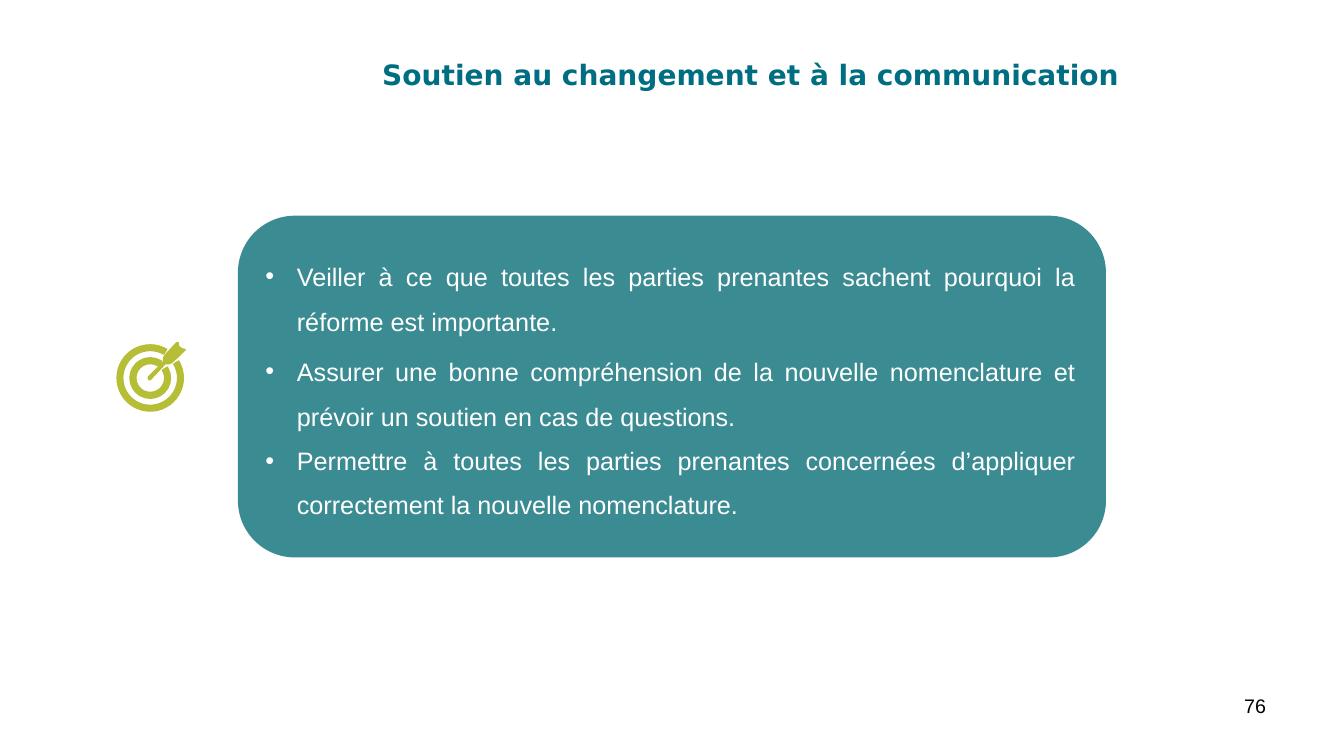
import dataclasses

import pptx
import pptx.dml.color
import pptx.enum.shapes
import pptx.enum.text
import pptx.oxml.ns
import pptx.util
from lxml import etree

WIDTH, HEIGHT = pptx.util.Inches(13.33), pptx.util.Inches(7.5)
TEAL, DEEP_TEAL, LIME, WHITE, BLACK = "3B8B92", "006E82", "B5BE35", "FFFFFF", "000000"
ANCHOR_TOP = pptx.enum.text.MSO_ANCHOR.TOP
LEFT, JUSTIFY = pptx.enum.text.PP_ALIGN.LEFT, pptx.enum.text.PP_ALIGN.JUSTIFY
PRESET = pptx.enum.shapes.MSO_SHAPE


@dataclasses.dataclass(frozen=True)
class Area:
    """Position and size in percent of the slide's width and height."""
    left: float
    top: float
    width: float
    height: float


@dataclasses.dataclass(frozen=True)
class Goal:
    """One bulleted goal with its spacing in points."""
    wording: str
    leading: float
    before: float


@dataclasses.dataclass(frozen=True)
class Ring:
    """A target ring: diameter in percent of slide height, open angles, thickness share."""
    diameter: float
    start: float
    end: float
    thickness: float


TITLE_AREA = Area(7.88, 4.13, 84.47, 10.13)
PANEL_AREA = Area(17.7, 28.53, 64.59, 45.2)
GOALS_AREA = Area(19.65, 32.4, 60.77, 36.4)
NUMBER_AREA = Area(92.57, 91.47, 2.5, 3.47)

GOALS = [
    Goal("Veiller à ce que toutes les parties prenantes sachent pourquoi la "
         "réforme est importante.", 32.4, 0),
    Goal("Assurer une bonne compréhension de la nouvelle nomenclature et "
         "prévoir un soutien en cas de questions.", 32.4, 2.9),
    Goal("Permettre à toutes les parties prenantes concernées d’appliquer "
         "correctement la nouvelle nomenclature.", 31.5, 0),
]

TARGET_X, TARGET_Y = 11.18, 50
RINGS = [Ring(8.8, 329, 300, 0.09), Ring(5.4, 327, 305, 0.15)]
DART_ROWS = 750
DART = [(28, -35), (26, -35), (15, -23), (13, -20), (13, -16), (-2, -1), (-2, 1),
        (-1, 2), (0, 2), (15, -14), (19, -14), (21, -15), (28, -21), (35, -28),
        (32, -29), (30, -30), (28, -32)]


def color(code: str) -> pptx.dml.color.RGBColor:
    """Turn a hex string into a colour."""
    return pptx.dml.color.RGBColor.from_string(code)


def across(percent: float) -> int:
    """Return a share of the slide's width."""
    return round(WIDTH * percent / 100)


def down(percent: float) -> int:
    """Return a share of the slide's height."""
    return round(HEIGHT * percent / 100)


def place(shape, area: Area) -> None:
    """Move and size a shape to its area."""
    shape.left, shape.top = across(area.left), down(area.top)
    shape.width, shape.height = across(area.width), down(area.height)


def paint(shape, code: str, outline: float = 0) -> None:
    """Give a shape a flat fill and an optional outline of the same colour."""
    shape.shadow.inherit = False
    shape.fill.solid()
    shape.fill.fore_color.rgb = color(code)
    if outline:
        shape.line.color.rgb = color(code)
        shape.line.width = pptx.util.Pt(outline)
    else:
        shape.line.fill.background()


def prepare_frame(frame, top_inset: float, wrap: bool = True) -> None:
    """Anchor text at the top with only a top inset, in percent of slide height."""
    frame.margin_left = frame.margin_right = frame.margin_bottom = 0
    frame.margin_top = down(top_inset)
    frame.word_wrap = wrap
    frame.auto_size = pptx.enum.text.MSO_AUTO_SIZE.NONE
    frame.vertical_anchor = ANCHOR_TOP


def write(paragraph, wording: str, font: str, size: float, code: str, bold: bool = False) -> None:
    """Add one formatted run."""
    run = paragraph.add_run()
    run.text = wording
    run.font.name, run.font.size, run.font.bold = font, pptx.util.Pt(size), bold
    run.font.color.rgb = color(code)


def add_title(slide) -> None:
    """Fill the title placeholder."""
    title = slide.shapes.title
    place(title, TITLE_AREA)
    prepare_frame(title.text_frame, 3.53)
    heading = title.text_frame.paragraphs[0]
    heading.alignment = LEFT
    heading._p.get_or_add_pPr().set("marL", str(across(20.56)))
    write(heading, "Soutien au changement et à la communication", "DejaVu Sans", 20, DEEP_TEAL, True)


def add_target(slide) -> None:
    """Draw the open rings and the dart."""
    for ring in RINGS:
        size = down(ring.diameter)
        arc = slide.shapes.add_shape(PRESET.BLOCK_ARC, across(TARGET_X) - size // 2,
                                     down(TARGET_Y) - size // 2, size, size)
        arc.adjustments[0], arc.adjustments[1] = ring.start * 0.6, ring.end * 0.6
        arc.adjustments[2] = ring.thickness
        paint(arc, LIME, 0.75)
    builder = slide.shapes.build_freeform(*DART[0], scale=HEIGHT / DART_ROWS)
    builder.add_line_segments(DART[1:], close=True)
    paint(builder.convert_to_shape(across(TARGET_X), down(TARGET_Y)), LIME, 0.75)


def add_panel(slide) -> None:
    """Draw the rounded panel behind the goals."""
    panel = slide.shapes.add_shape(PRESET.ROUNDED_RECTANGLE, 0, 0, 0, 0)
    place(panel, PANEL_AREA)
    paint(panel, TEAL)


def add_goals(slide) -> None:
    """Fill the body placeholder with the goals and bring it in front of the panel."""
    body = slide.placeholders[1]
    body.element.getparent().append(body.element)
    place(body, GOALS_AREA)
    frame = body.text_frame
    prepare_frame(frame, 0.13)
    for index, goal in enumerate(GOALS):
        paragraph = frame.add_paragraph() if index else frame.paragraphs[0]
        properties = paragraph._p.get_or_add_pPr()
        properties.set("marL", str(across(2.44)))
        properties.set("marR", str(across(0.4)))
        properties.set("indent", str(-across(2.35)))
        bullet = etree.SubElement(properties, pptx.oxml.ns.qn("a:buChar"))
        bullet.set("char", "•")
        paragraph.alignment = JUSTIFY
        paragraph.line_spacing = pptx.util.Pt(goal.leading)
        paragraph.space_before = pptx.util.Pt(goal.before)
        write(paragraph, goal.wording, "Arial", 18, WHITE)


def add_number(slide) -> None:
    """Write the page number."""
    number = slide.shapes.add_textbox(0, 0, 0, 0)
    place(number, NUMBER_AREA)
    prepare_frame(number.text_frame, 0.27, False)
    write(number.text_frame.paragraphs[0], "76", "Arial", 14, BLACK)


def main() -> None:
    """Build the slide and save it."""
    deck = pptx.Presentation()
    deck.slide_width, deck.slide_height = WIDTH, HEIGHT
    slide = deck.slides.add_slide(deck.slide_layouts[1])
    add_title(slide)
    add_target(slide)
    add_panel(slide)
    add_goals(slide)
    add_number(slide)
    deck.save("out.pptx")


if __name__ == "__main__":
    main()
